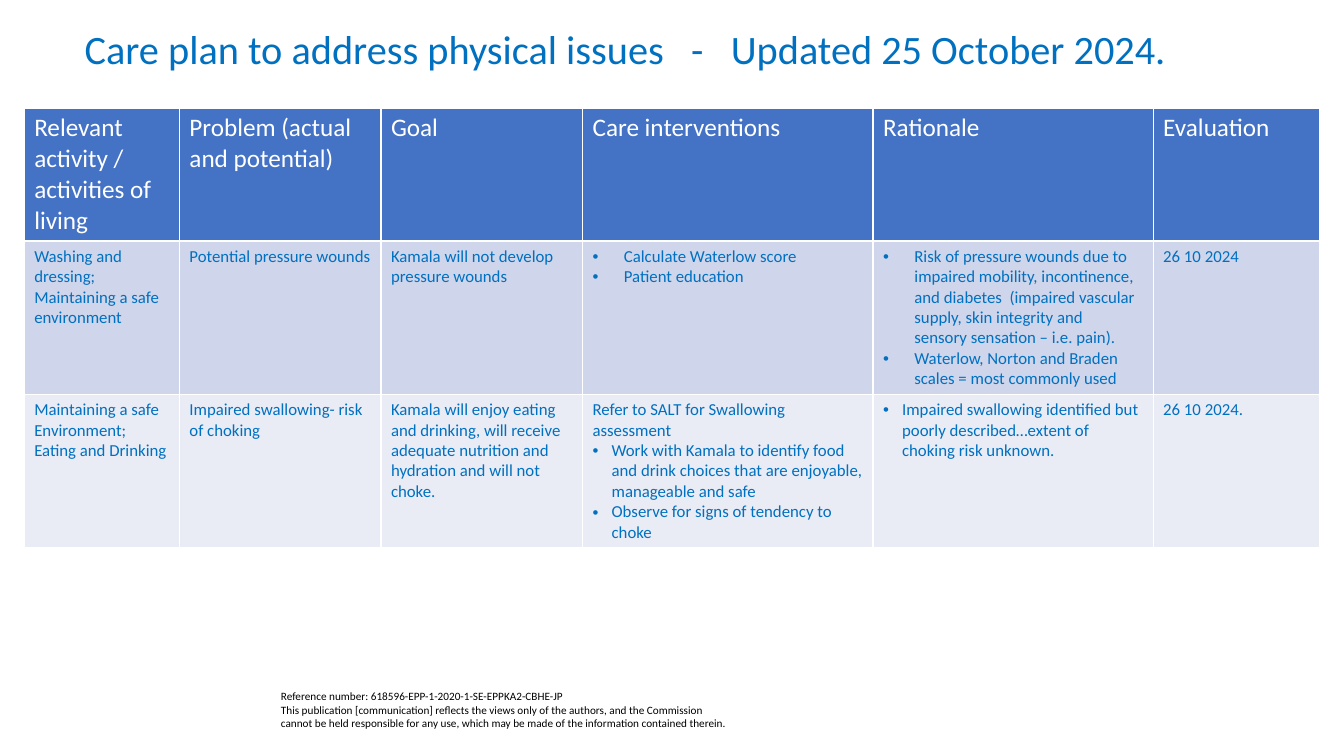
from lxml.etree import SubElement
from pptx import Presentation
from pptx.dml.color import RGBColor
from pptx.enum.text import MSO_ANCHOR as Anchor, MSO_AUTO_SIZE as AutoSize, PP_ALIGN as Align
from pptx.oxml.ns import qn
from pptx.util import Cm, Pt

BLACK = RGBColor(0x00, 0x00, 0x00)
WHITE = RGBColor(0xFF, 0xFF, 0xFF)
TEXT_BLUE = RGBColor(0x00, 0x70, 0xC0)
HEADER_BLUE = RGBColor(0x44, 0x72, 0xC4)
BAND_DARK = RGBColor(0xCF, 0xD5, 0xEA)
BAND_LIGHT = RGBColor(0xE9, 0xEB, 0xF5)

WIDE, NARROW = Cm(0.79), Cm(0.48)  # bullet indents

COLUMN_WIDTHS = [3.91, 5.08, 5.08, 7.32, 7.06, 4.19]

# Each row: height, fill, text size, text colour, cells.
# A cell is a list of (text, bullet indent) paragraphs.
ROWS = [
    (3.35, HEADER_BLUE, 18, WHITE, [
        [("Relevant activity / activities of living", 0)],
        [("Problem (actual and potential)", 0)],
        [("Goal", 0)],
        [("Care interventions", 0)],
        [("Rationale", 0)],
        [("Evaluation", 0)],
    ]),
    (3.86, BAND_DARK, 12, TEXT_BLUE, [
        [("Washing and dressing; Maintaining a safe environment", 0)],
        [("Potential pressure wounds", 0)],
        [("Kamala will not develop pressure wounds", 0)],
        [("Calculate Waterlow score", WIDE), ("Patient education", WIDE)],
        [("Risk of pressure wounds due to impaired mobility, incontinence, and diabetes  "
          "(impaired vascular supply, skin integrity and  sensory sensation – i.e. pain).", WIDE),
         ("Waterlow, Norton and Braden scales = most commonly used", WIDE)],
        [("26 10 2024", 0)],
    ]),
    (3.86, BAND_LIGHT, 12, TEXT_BLUE, [
        [("Maintaining a safe Environment; Eating and Drinking", 0)],
        [("Impaired swallowing- risk of choking", 0)],
        [("Kamala will enjoy eating and drinking, will receive adequate nutrition "
          "and hydration and will not choke.", 0)],
        [("Refer to SALT for Swallowing assessment", 0),
         ("Work with Kamala to identify food and drink choices that are enjoyable, "
          "manageable and safe", NARROW),
         ("Observe for signs of tendency to choke", NARROW)],
        [("Impaired swallowing identified but poorly described…extent of choking "
          "risk unknown.", NARROW)],
        [("26 10 2024.", 0)],
    ]),
]


def write(para, text, size, colour):
    para.text = text
    font_format = {"name": "Calibri", "size": Pt(size), "bold": False}
    for span in para.runs:
        for name, value in font_format.items():
            setattr(span.font, name, value)
        span.font.color.rgb = colour


def add_bullet(para, indent):
    properties = para._p.get_or_add_pPr()
    properties.set("marL", str(indent))
    properties.set("indent", str(-indent))
    SubElement(properties, qn("a:buFont")).set("typeface", "Arial")
    SubElement(properties, qn("a:buChar")).set("char", "•")


deck = Presentation()
deck.slide_width, deck.slide_height = Cm(33.87), Cm(19.05)
page = deck.slides.add_slide(deck.slide_layouts[5])

# Title
title = page.shapes.title
title.left, title.top, title.width, title.height = Cm(1.88), Cm(0.51), Cm(29.21), Cm(1.55)
title.text_frame.auto_size = AutoSize.NONE
title.text_frame.vertical_anchor = Anchor.MIDDLE
heading = title.text_frame.paragraphs[0]
write(heading, "Care plan to address physical issues   -   Updated 25 October 2024.", 28.8, TEXT_BLUE)
heading.alignment = Align.LEFT
heading.line_spacing = 0.9

# Care plan table
care_plan = page.shapes.add_table(
    len(ROWS), len(COLUMN_WIDTHS), Cm(0.61), Cm(2.72),
    Cm(sum(COLUMN_WIDTHS)), Cm(sum(row[0] for row in ROWS))).table
for column, width in zip(care_plan.columns, COLUMN_WIDTHS):
    column.width = Cm(width)
for row, (height, fill, size, colour, entries) in zip(care_plan.rows, ROWS):
    row.height = Cm(height)
    for cell, entry in zip(row.cells, entries):
        cell.fill.solid()
        cell.fill.fore_color.rgb = fill
        frame = cell.text_frame
        for number, (text, indent) in enumerate(entry):
            para = frame.add_paragraph() if number else frame.paragraphs[0]
            if indent:
                add_bullet(para, indent)
            write(para, text, size, colour)

# Reference note
note = page.shapes.add_textbox(Cm(6.83), Cm(17.25), Cm(11.79), Cm(1.27))
note.text_frame.word_wrap = True
write(note.text_frame.paragraphs[0],
      "Reference number: 618596-EPP-1-2020-1-SE-EPPKA2-CBHE-JP\v"
      "This publication [communication] reflects the views only of the authors, and the "
      "Commission cannot be held responsible for any use, which may be made of the "
      "information contained therein.", 8, BLACK)

deck.save("out.pptx")
